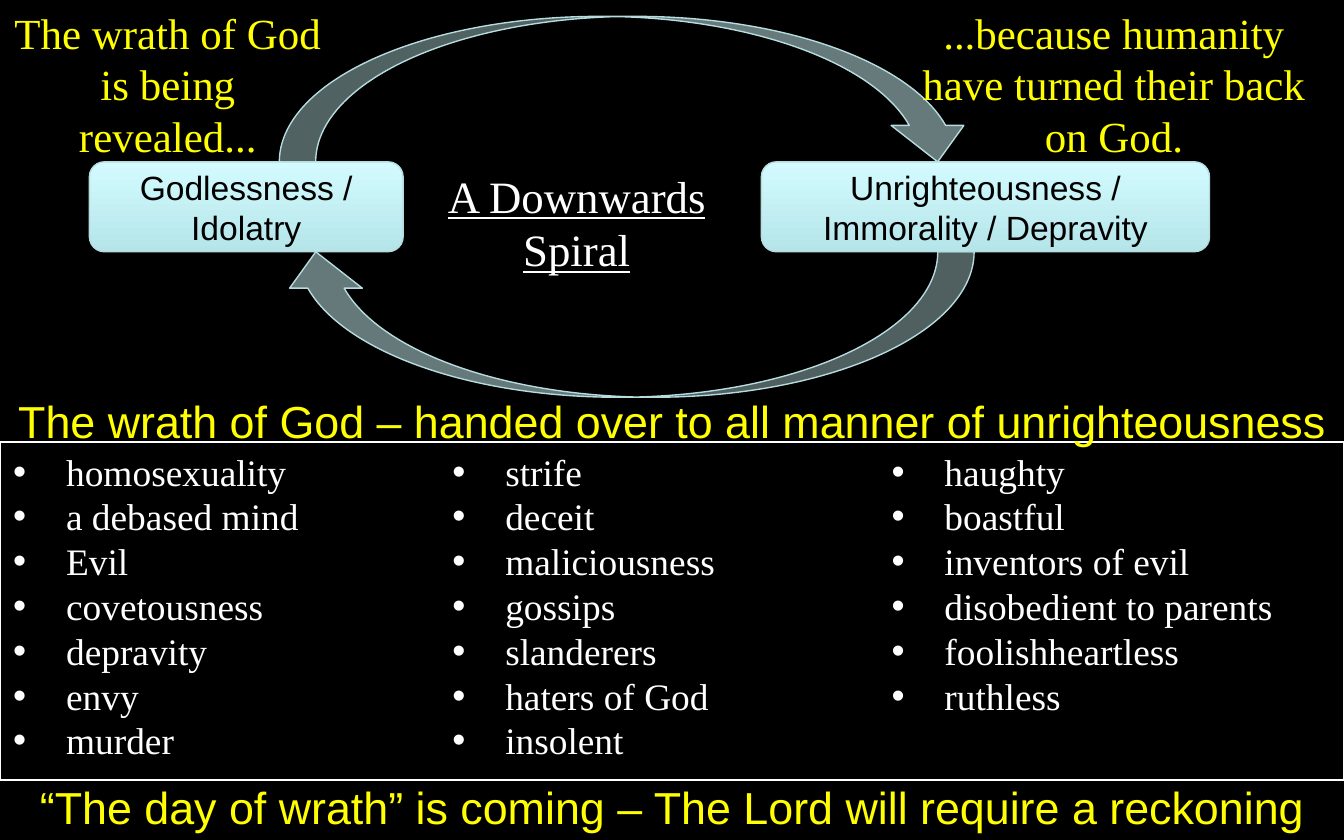
from lxml import etree
from pptx import Presentation
from pptx import util as u
from pptx.dml.color import RGBColor
from pptx.enum import shapes, text
from pptx.oxml import ns

BLACK = RGBColor(0x00, 0x00, 0x00)
WHITE = RGBColor(0xFF, 0xFF, 0xFF)
YELLOW = RGBColor(0xFF, 0xFF, 0x00)
TEAL = RGBColor(0xBB, 0xE0, 0xE3)
EDGE = RGBColor(0xB6, 0xDC, 0xDF)
BOX_DARK = RGBColor(0xB5, 0xE5, 0xE9)
BOX_LIGHT = RGBColor(0xD3, 0xFB, 0xFF)
SERIF, SANS = "Times New Roman", "Arial"
PAGE_WIDTH, PAGE_HEIGHT = 25.4, 15.88
BANNER_HEIGHT = 1.27
INDENT = 1.0

VICES = [
    "homosexuality", "a debased mind", "Evil", "covetousness", "depravity", "envy", "murder",
    "strife", "deceit", "maliciousness", "gossips", "slanderers", "haters of God", "insolent",
    "haughty", "boastful", "inventors of evil", "disobedient to parents", "foolishheartless",
    "ruthless",
]


def style_text(paragraph, size, font, color, align=text.PP_ALIGN.CENTER):
    """Align a paragraph and format its runs."""
    paragraph.alignment = align
    for span in paragraph.runs:
        span.font.size = u.Pt(size)
        span.font.name = font
        span.font.color.rgb = color


def add_caption(page, box, words, size, font, color, underline=False):
    """Place a centred caption in the given box."""
    caption = page.shapes.add_textbox(*map(u.Cm, box))
    frame = caption.text_frame
    frame.word_wrap = True
    frame.auto_size = text.MSO_AUTO_SIZE.SHAPE_TO_FIT_TEXT
    frame.text = words
    style_text(frame.paragraphs[0], size, font, color)
    if underline:
        frame.paragraphs[0].runs[0].font.underline = True


def add_outlined_shape(page, kind, box, color):
    """Place a shadowless preset shape with a thin outline."""
    shape = page.shapes.add_shape(kind, *map(u.Cm, box))
    shape.shadow.inherit = False
    shape.line.color.rgb = color
    shape.line.width = u.Pt(0.75)
    return shape


def add_arrow(page, box, opacity, rotation=0):
    """Place a translucent curved arrow."""
    arrow = add_outlined_shape(page, shapes.MSO_SHAPE.CURVED_DOWN_ARROW, box, EDGE)
    arrow.rotation = rotation
    arrow.fill.solid()
    arrow.fill.fore_color.rgb = TEAL
    color = arrow.fill._xPr.find(".//" + ns.qn("a:srgbClr"))
    etree.SubElement(color, ns.qn("a:alpha")).set("val", str(opacity * 1000))


def add_stage(page, box, words):
    """Place one gradient box of the spiral."""
    stage = add_outlined_shape(
        page, shapes.MSO_SHAPE.FLOWCHART_ALTERNATE_PROCESS, box, EDGE)
    stage.fill.gradient()
    stage.fill.gradient_angle = 90
    for stop, color in zip(stage.fill.gradient_stops, (BOX_DARK, BOX_LIGHT)):
        stop.color.rgb = color
    frame = stage.text_frame
    frame.word_wrap = True
    frame.vertical_anchor = text.MSO_ANCHOR.MIDDLE
    frame.text = words
    style_text(frame.paragraphs[0], 18, SANS, BLACK)


def add_spiral(page, box):
    """Draw the two stages, the arrows joining them and the title between."""
    left, top, width, height = box
    stage_height = 1.7
    arrow_height = (height - stage_height) / 2
    stage_top = top + arrow_height
    stage_bottom = stage_top + stage_height
    arrow_left, arrow_width = left + 3.59, 13.13
    add_arrow(page, (arrow_left, top, arrow_width, arrow_height), 55)
    add_caption(page, (left + 5.93, stage_top, 6.56, 2.31),
                "A Downwards Spiral", 24, SERIF, WHITE, underline=True)
    add_stage(page, (left, stage_top, 5.93, stage_height), "Godlessness / Idolatry")
    add_stage(page, (left + width - 8.47, stage_top, 8.47, stage_height),
              "Unrighteousness / Immorality / Depravity")
    add_arrow(page, (arrow_left, stage_bottom, arrow_width, arrow_height), 54, 180)


def add_vices(page, box):
    """List the vices as bullets in three columns."""
    panel = add_outlined_shape(page, shapes.MSO_SHAPE.RECTANGLE, box, WHITE)
    panel.fill.background()
    frame = panel.text_frame
    frame.word_wrap = True
    frame.auto_size = text.MSO_AUTO_SIZE.SHAPE_TO_FIT_TEXT
    frame.vertical_anchor = text.MSO_ANCHOR.TOP
    frame._txBody.bodyPr.set("numCol", "3")
    frame.text = "\n".join(VICES)
    for paragraph in frame.paragraphs:
        properties = paragraph._p.get_or_add_pPr()
        properties.set("marL", str(u.Cm(INDENT)))
        properties.set("indent", str(-u.Cm(INDENT)))
        etree.SubElement(properties, ns.qn("a:buFont")).set("typeface", SANS)
        etree.SubElement(properties, ns.qn("a:buChar")).set("char", "•")
        style_text(paragraph, 20, SERIF, WHITE, text.PP_ALIGN.LEFT)


def add_banner(page, top, words):
    """Place a yellow line of text across the page."""
    add_caption(page, (0, top, PAGE_WIDTH, BANNER_HEIGHT), words, 24, SANS, YELLOW)


def main():
    """Build and save the deck."""
    deck = Presentation()
    deck.slide_width, deck.slide_height = u.Cm(PAGE_WIDTH), u.Cm(PAGE_HEIGHT)
    page = deck.slides.add_slide(deck.slide_layouts[6])
    page.background.fill.solid()
    page.background.fill.fore_color.rgb = BLACK
    add_spiral(page, (1.69, 0.31, 21.17, 7.2))
    add_caption(page, (0, 0, 6.35, 3.2),
                "The wrath of God is being revealed...", 23, SERIF, YELLOW)
    add_vices(page, (0, 8.36, PAGE_WIDTH, 6.39))
    add_banner(page, 7.32, "The wrath of God – handed over to all manner of unrighteousness")
    add_caption(page, (16.71, 0, 8.69, 3.2),
                "...because humanity have turned their back on God.", 23, SERIF, YELLOW)
    add_banner(page, PAGE_HEIGHT - BANNER_HEIGHT,
               "“The day of wrath” is coming – The Lord will require a reckoning")
    deck.save("out.pptx")


if __name__ == "__main__":
    main()
